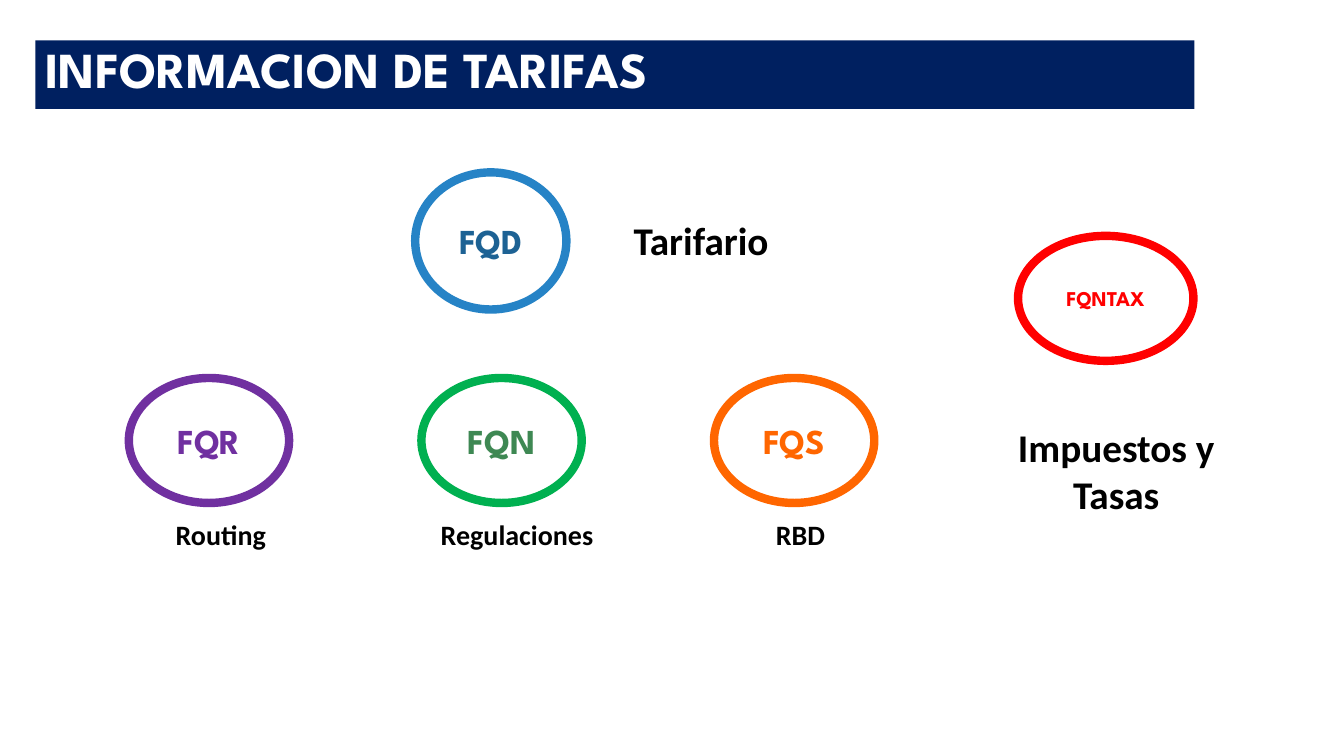
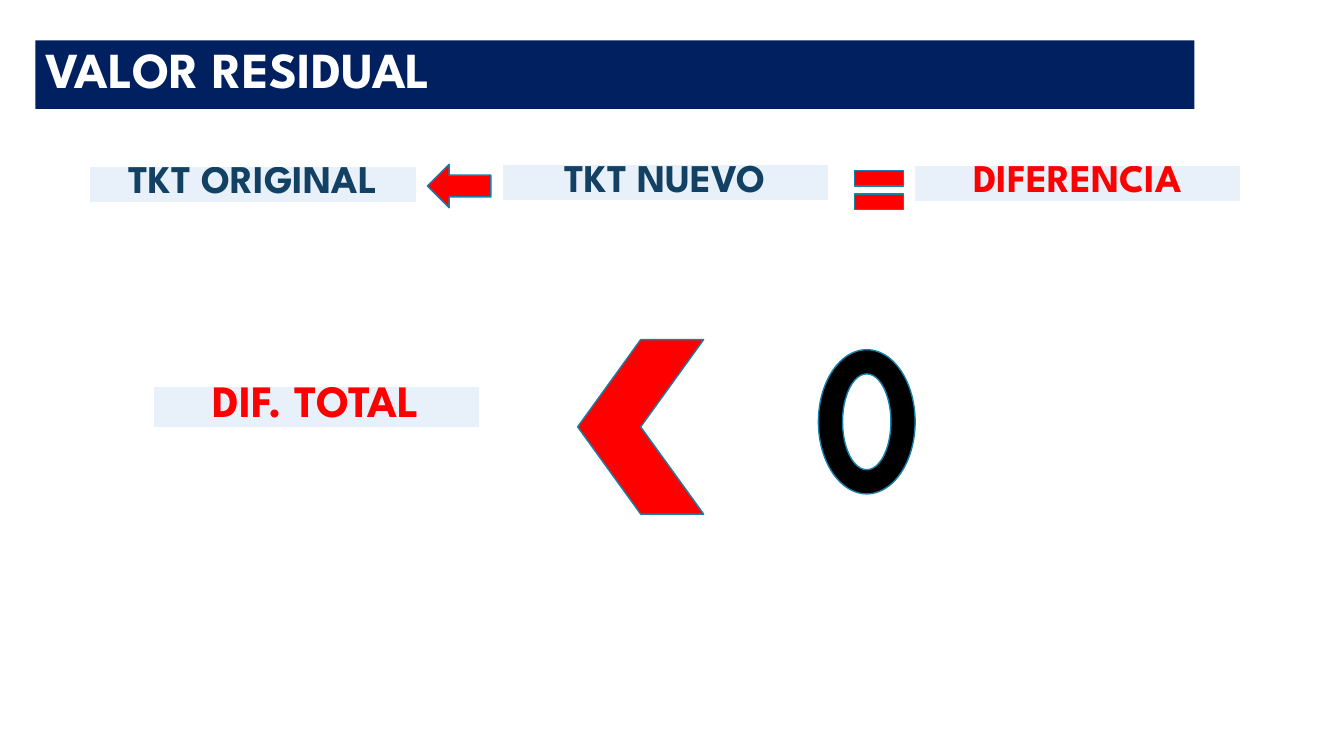
"""Build two slides on fare queries and residual ticket value."""
from lxml.etree import SubElement
from pptx import Presentation
from pptx.dml.color import RGBColor
from pptx.enum.shapes import MSO_SHAPE
from pptx.enum.text import MSO_ANCHOR, MSO_AUTO_SIZE, PP_ALIGN
from pptx.oxml.ns import qn
from pptx.util import Pt

COLORS = {
    "white": "FFFFFF", "black": "000000", "navy": "002060", "red": "FF0000",
    "blue": "2683C6", "dark_blue": "1D6294", "purple": "7030A0",
    "green": "00B050", "dark_green": "3E8853", "orange": "FF6600",
    "pale": "E8F1FA", "ink": "134163", "edge": "1580A9",
}
HEAD, BODY = "League Spartan", "Calibri"

FARES_TITLE = "INFORMACION DE TARIFAS"
ROW_LEFT, ROW_STEP, ROW_TOP, ROW_SIZE = 92, 209, 270, (114.5, 89.3)
ROW = [("FQR", "purple", "purple"), ("FQN", "green", "dark_green"),
       ("FQS", "orange", "orange")]
OVALS = [
    ("FQD", "blue", "dark_blue", 25, (296.6, 123.1, 108, 98)),
    ("FQNTAX", "red", "red", 15, (727.2, 168.5, 125.3, 89.3)),
] + [(text, line, color, 25, (ROW_LEFT + i * ROW_STEP, ROW_TOP, *ROW_SIZE))
     for i, (text, line, color) in enumerate(ROW)]
CAPTIONS = [
    ("Tarifario", 28, (403.2, 151.2, 195, 41)),
    ("Impuestos y Tasas", 28, (699.8, 298.8, 195, 75)),
    ("Routing", 20, (88.6, 365.8, 138.2, 31.7)),
    ("Regulaciones", 20, (300.2, 365.8, 138.2, 31.7)),
    ("RBD", 20, (502.6, 365.8, 138.2, 31.7)),
]

RESIDUAL_TITLE = "VALOR RESIDUAL"
LABEL_WIDTH = 233.3
LABELS = [
    ("TKT ORIGINAL", "ink", 28, (64.1, 118.8)),
    ("TKT NUEVO", "ink", 28, (358.6, 117.6)),
    ("DIFERENCIA", "red", 28, (653, 118.3)),
    ("DIF. TOTAL", "red", 32, (109.4, 275.8)),
]
SYMBOLS = [
    (MSO_SHAPE.MATH_EQUAL, "red", 0, (604.1, 112.3, 47.5, 46.8)),
    (MSO_SHAPE.CHEVRON, "red", 180, (412.6, 242.6, 90, 124.6)),
    (MSO_SHAPE.DONUT, "black", 0, (584.6, 249.8, 69.1, 103)),
    (MSO_SHAPE.LEFT_ARROW, "red", 0, (305.3, 117.4, 45.4, 31)),
]


def rgb(name):
    return RGBColor.from_string(COLORS[name])


def fill(target, name):
    target.fill.solid()
    target.fill.fore_color.rgb = rgb(name)


def write(tf, text, size, color, font=HEAD, align=PP_ALIGN.CENTER):
    p = tf.paragraphs[0]
    p.alignment = align
    r = p.add_run()
    r.text = text
    for name, value in {"size": Pt(size), "name": font, "bold": True}.items():
        setattr(r.font, name, value)
    r.font.color.rgb = rgb(color)
    return p


def add_slide(prs, title):
    s = prs.slides.add_slide(prs.slide_layouts[5])
    sp = s.shapes.title
    for name, value in zip(("left", "top", "width", "height"),
                           (25.2, 28.8, 828, 49)):
        setattr(sp, name, Pt(value))
    fill(sp, "navy")
    tf = sp.text_frame
    tf.auto_size = MSO_AUTO_SIZE.NONE
    tf.vertical_anchor = MSO_ANCHOR.TOP
    p = write(tf, title, 36, "white", align=PP_ALIGN.LEFT)
    p.line_spacing = 0.9
    return s


def add_figure(s, kind, box, color, line, width):
    sp = s.shapes.add_shape(kind, *map(Pt, box))
    sp.shadow.inherit = False
    fill(sp, color)
    sp.line.color.rgb = rgb(line)
    sp.line.width = Pt(width)
    return sp


def add_caption(s, text, size, box):
    tf = s.shapes.add_textbox(*map(Pt, box)).text_frame
    tf.word_wrap = True
    tf.auto_size = MSO_AUTO_SIZE.SHAPE_TO_FIT_TEXT
    write(tf, text, size, "black", BODY)


def add_label(s, text, color, size, corner):
    box = (*corner, LABEL_WIDTH, round(size * 0.9))
    cell = s.shapes.add_table(1, 1, *map(Pt, box)).table.cell(0, 0)
    cell.margin_top = cell.margin_bottom = 0
    tcPr = cell._tc.get_or_add_tcPr()
    for side in ("a:lnL", "a:lnR", "a:lnT", "a:lnB"):
        ln = SubElement(tcPr, qn(side), w=str(Pt(1)))
        paint = SubElement(ln, qn("a:solidFill"))
        SubElement(paint, qn("a:srgbClr"), val=COLORS["white"])
    fill(cell, "pale")
    write(cell.text_frame, text, size, color)


def build_fares(prs):
    s = add_slide(prs, FARES_TITLE)
    for text, line, color, size, box in OVALS:
        sp = add_figure(s, MSO_SHAPE.OVAL, box, "white", line, 6)
        write(sp.text_frame, text, size, color)
    for caption in CAPTIONS:
        add_caption(s, *caption)


def build_residual(prs):
    s = add_slide(prs, RESIDUAL_TITLE)
    for label in LABELS:
        add_label(s, *label)
    for kind, color, angle, box in SYMBOLS:
        add_figure(s, kind, box, color, "edge", 1).rotation = angle


def main():
    prs = Presentation()
    prs.slide_width, prs.slide_height = Pt(960), Pt(540)
    build_fares(prs)
    build_residual(prs)
    prs.save("out.pptx")


if __name__ == "__main__":
    main()
